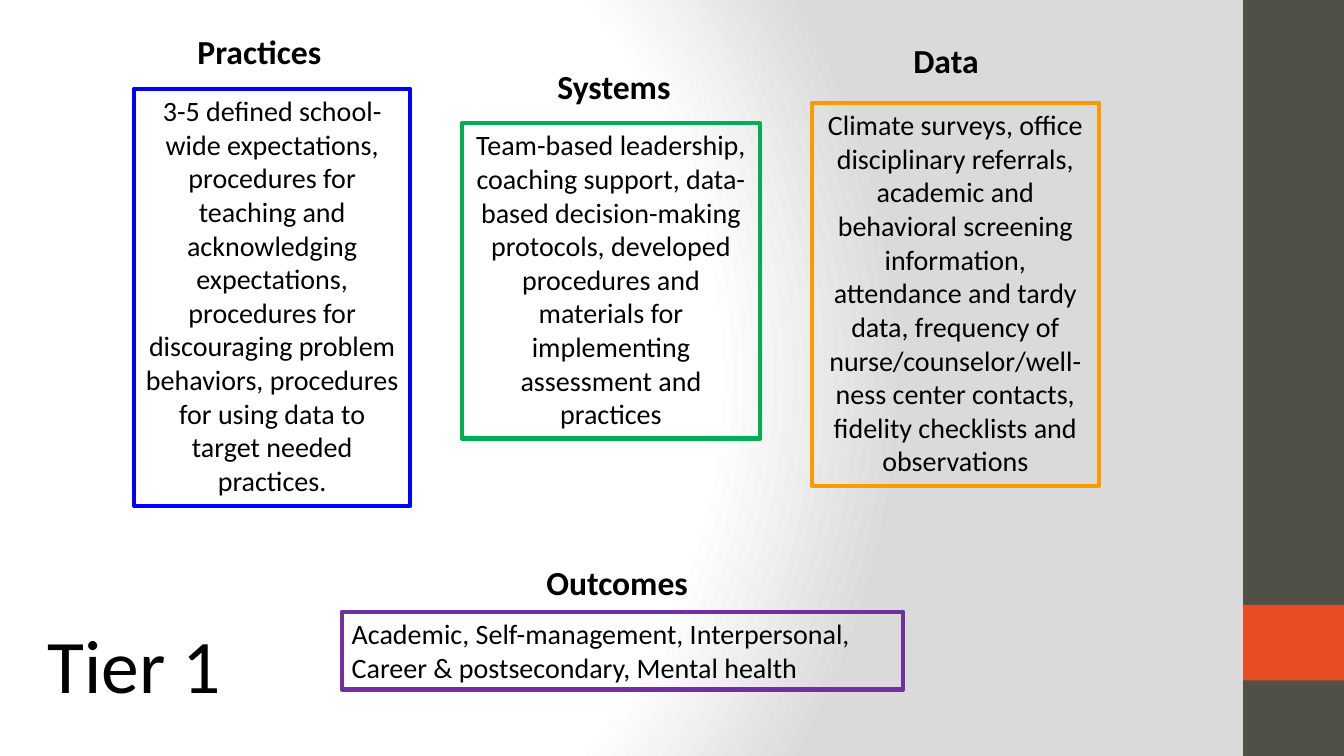
from lxml import etree
from pptx import Presentation
from pptx.dml.color import RGBColor
from pptx.enum.shapes import MSO_SHAPE
from pptx.enum.text import MSO_ANCHOR, MSO_AUTO_SIZE, PP_ALIGN
from pptx.util import Inches, Pt

RECTANGLE = MSO_SHAPE.RECTANGLE
MIDDLE = MSO_ANCHOR.MIDDLE
FIT_SHAPE, NO_FIT = MSO_AUTO_SIZE.SHAPE_TO_FIT_TEXT, MSO_AUTO_SIZE.NONE
LEFT, CENTER = PP_ALIGN.LEFT, PP_ALIGN.CENTER

BLACK = RGBColor(0x00, 0x00, 0x00)
BLUE = RGBColor(0x00, 0x00, 0xFF)
GREEN = RGBColor(0x00, 0xB0, 0x50)
ORANGE = RGBColor(0xFF, 0x99, 0x00)
PURPLE = RGBColor(0x70, 0x30, 0xA0)
OLIVE = RGBColor(0x50, 0x50, 0x46)
RED = RGBColor(0xE8, 0x4C, 0x22)
FONT = "Calibri"

# Content: heading, heading box, text, text box, border colour, alignment, space before
TITLE = "Tier 1"
SECTIONS = [
    ("Practices", (1.86, 0.26, 1.69, 0.5),
     "3-5 defined school-wide expectations, procedures for teaching and "
     "acknowledging expectations, procedures for discouraging problem "
     "behaviors, procedures for using data to target needed practices.",
     (1.33, 0.88, 2.74, 4.14), BLUE, CENTER, 0),
    ("Systems", (5.43, 0.6, 1.88, 0.5),
     "Team-based leadership, coaching support, data-based decision-making "
     "protocols, developed procedures and materials for implementing "
     "assessment and practices",
     (4.58, 1.22, 2.96, 3.13), GREEN, CENTER, 0),
    ("Data", (8.96, 0.35, 1.78, 0.5),
     "Climate surveys, office disciplinary referrals, academic and behavioral "
     "screening information, attendance and tardy data, frequency of "
     "nurse/counselor/well-ness center contacts, fidelity checklists and "
     "observations",
     (8.05, 1.02, 2.85, 3.8), ORANGE, CENTER, 0),
    ("Outcomes", (5.32, 5.53, 3.37, 0.5),
     "Academic, Self-management, Interpersonal, Career & postsecondary, "
     "Mental health",
     (3.39, 6.07, 5.57, 0.77), PURPLE, LEFT, 6),
]
SIDEBAR = [((12.33, 0, 1, 7.5), OLIVE), ((12.33, 6, 1, 0.75), RED)]

BACKGROUND = """
<p:bg xmlns:p="http://schemas.openxmlformats.org/presentationml/2006/main"
      xmlns:a="http://schemas.openxmlformats.org/drawingml/2006/main">
  <p:bgPr>
    <a:gradFill rotWithShape="1">
      <a:gsLst>
        <a:gs pos="0"><a:srgbClr val="FFFFFF"/></a:gs>
        <a:gs pos="75000"><a:srgbClr val="FFFFFF"/></a:gs>
        <a:gs pos="100000"><a:srgbClr val="DADADA"/></a:gs>
      </a:gsLst>
      <a:path path="circle">
        <a:fillToRect l="20000" t="50000" r="100000" b="50000"/>
      </a:path>
    </a:gradFill>
    <a:effectLst/>
  </p:bgPr>
</p:bg>"""


def write(frame, text, size, align=LEFT, bold=False, before=0):
    frame.word_wrap = True
    frame.text = text
    paragraph = frame.paragraphs[0]
    paragraph.alignment = align
    paragraph.space_before = Pt(before)
    paragraph.font.name = FONT
    paragraph.font.size = Pt(size)
    paragraph.font.bold = bold
    paragraph.font.color.rgb = BLACK


def add_text(slide, box, text, size, **style):
    textbox = slide.shapes.add_textbox(*map(Inches, box))
    write(textbox.text_frame, text, size, **style)
    textbox.text_frame.auto_size = FIT_SHAPE
    return textbox


def main():
    prs = Presentation()
    prs.slide_width, prs.slide_height = Inches(13.33), Inches(7.5)
    slide = prs.slides.add_slide(prs.slide_layouts[5])

    # Background gradient
    slide.element.cSld.insert(0, etree.fromstring(BACKGROUND))

    # Sidebar on the right edge
    for box, color in SIDEBAR:
        band = slide.shapes.add_shape(RECTANGLE, *map(Inches, box))
        band.shadow.inherit = False
        band.fill.solid()
        band.fill.fore_color.rgb = color
        band.line.fill.background()

    # Headings with their framed texts
    for heading, heading_box, body, body_box, color, align, before in SECTIONS:
        add_text(slide, heading_box, heading, 24, bold=True)
        panel = add_text(slide, body_box, body, 20, align=align, before=before)
        panel.line.color.rgb = color
        panel.line.width = Pt(3)

    # Title
    title = slide.shapes.title
    title.left, title.top = Inches(0.13), Inches(6.03)
    title.width, title.height = Inches(2.4), Inches(1.11)
    write(title.text_frame, TITLE, 54, align=CENTER)
    title.text_frame.vertical_anchor = MIDDLE
    title.text_frame.auto_size = NO_FIT

    prs.save("out.pptx")


if __name__ == "__main__":
    main()
